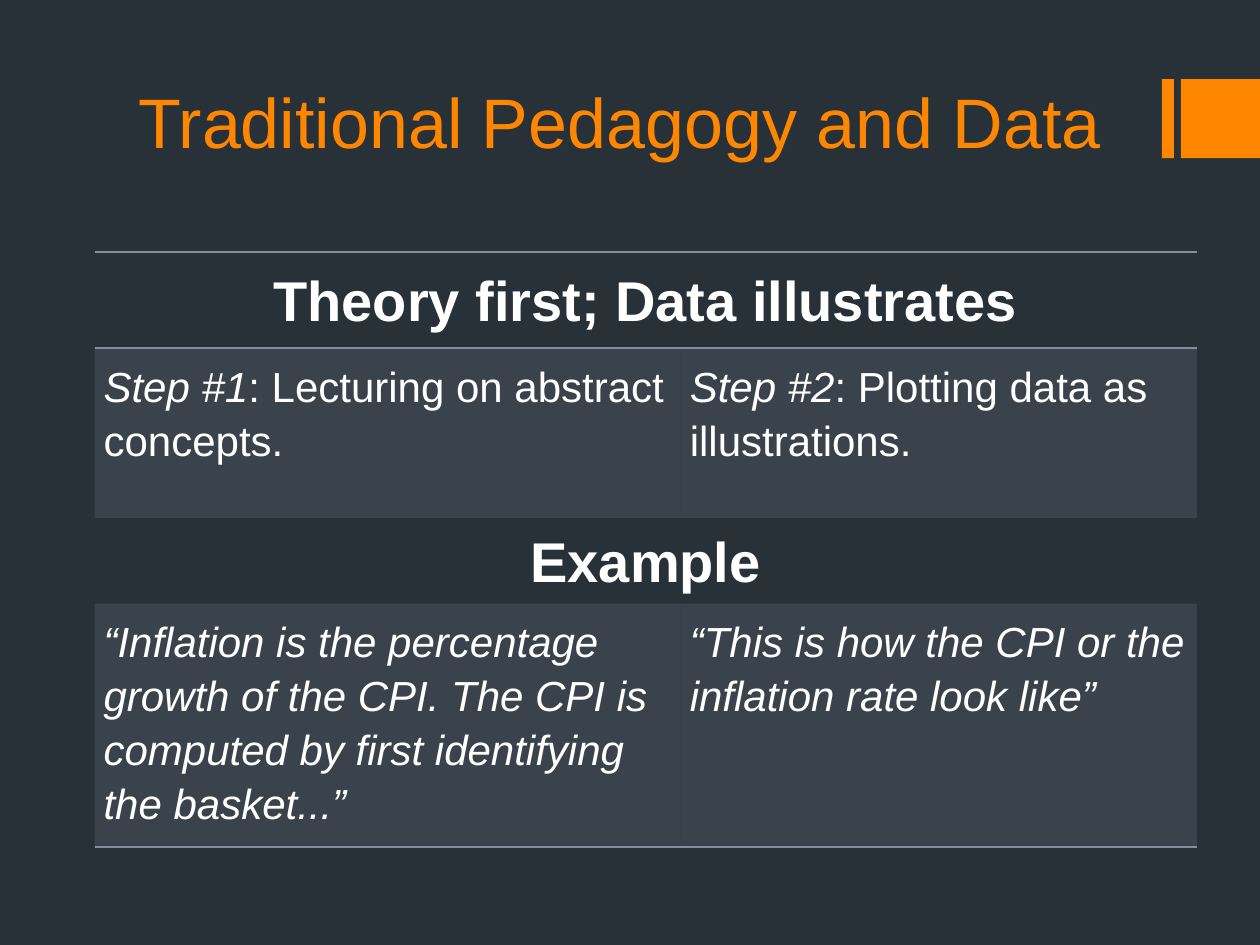
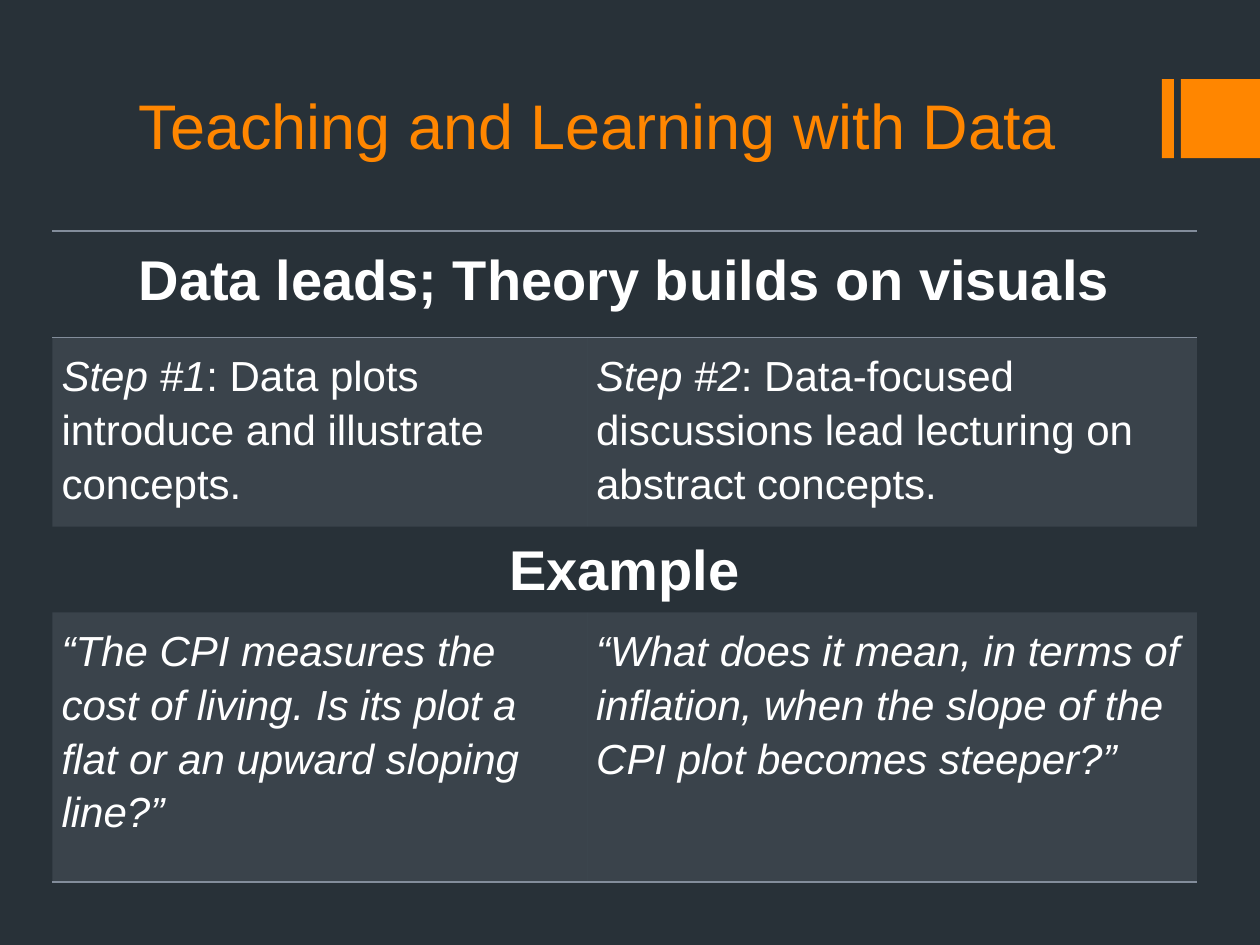
from dataclasses import dataclass

import pptx
import pptx.dml.color
import pptx.enum.shapes
import pptx.enum.text
import pptx.oxml
import pptx.oxml.ns
import pptx.util

Pt = pptx.util.Pt
PP_ALIGN = pptx.enum.text.PP_ALIGN


@dataclass(frozen=True)
class Theme:
    background: str = "283138"
    accent: str = "FF8600"
    text: str = "FFFFFF"
    rule: str = "838D9B"
    panel_opacity: int = 20
    font: str = "Arial"
    heading_size: int = 32
    body_size: int = 24
    line_spacing: float = 1.15
    cell_inset: float = 5.2


THEME = Theme()
SLIDE_SIZE = (720, 540)
TITLE_BOX = (72, 6, 576, 90.5)
ACCENT_BLOCKS = [(664, 45.2, 6.8, 45.2), (674.8, 45.2, 45.2, 45.2)]
NO_GRID_STYLE = "{2D5ABB26-0587-4C30-8999-92F81FD0307C}"

# Each body cell is (italic part, upright part).
LESSONS = [
    {
        "title": "Traditional Pedagogy and Data",
        "title_size": 40,
        "corner": (54, 144),
        "columns": (335, 295),
        "rows": (55, 97, 49, 139),
        "heading": "Theory first; Data illustrates",
        "steps": [
            ("Step #1", ": Lecturing on abstract concepts."),
            ("Step #2", ": Plotting data as illustrations."),
        ],
        "examples": [
            ("“Inflation is the percentage growth of the CPI. The CPI is "
             "computed by first identifying the basket...”", ""),
            ("“This is how the CPI or the inflation rate look like”", ""),
        ],
    },
    {
        "title": "Teaching and Learning with Data",
        "title_size": 36,
        "corner": (30, 132),
        "columns": (305.5, 348.5),
        "rows": (61, 108, 49, 154),
        "heading": "Data leads; Theory builds on visuals",
        "steps": [
            ("Step #1", ": Data plots introduce and illustrate concepts."),
            ("Step #2", ": Data-focused discussions lead lecturing on "
                        "abstract concepts."),
        ],
        "examples": [
            ("“The CPI measures the cost of living. Is its plot a flat or an "
             "upward sloping line?”", ""),
            ("“What does it mean, in terms of inflation, when the slope of "
             "the CPI plot becomes steeper?”", ""),
        ],
    },
]


def rgb(color):
    return pptx.dml.color.RGBColor.from_string(color)


def style(paragraph, size, color, alignment=PP_ALIGN.LEFT, spacing=1.0, bold=False):
    paragraph.alignment = alignment
    paragraph.line_spacing = spacing
    paragraph.font.name = THEME.font
    paragraph.font.size = Pt(size)
    paragraph.font.bold = bold
    paragraph.font.color.rgb = rgb(color)


def add_title(slide, lesson):
    title = slide.shapes.title
    title.left, title.top, title.width, title.height = map(Pt, TITLE_BOX)
    frame = title.text_frame
    frame.text = lesson["title"]
    frame.vertical_anchor = pptx.enum.text.MSO_ANCHOR.BOTTOM
    frame.auto_size = pptx.enum.text.MSO_AUTO_SIZE.NONE
    style(frame.paragraphs[0], lesson["title_size"], THEME.accent)


def add_accent_blocks(slide):
    for box in ACCENT_BLOCKS:
        block = slide.shapes.add_shape(
            pptx.enum.shapes.MSO_SHAPE.RECTANGLE, *map(Pt, box))
        block.shadow.inherit = False
        block.fill.solid()
        block.fill.fore_color.rgb = rgb(THEME.accent)
        block.line.fill.background()


def set_borders(cell, sides):
    """Rule the given sides ("T", "B"), listed in schema order before the fill."""
    properties = cell._tc.get_or_add_tcPr()
    for position, side in enumerate(sides):
        properties.insert(position, pptx.oxml.parse_xml(
            f'<a:ln{side} {pptx.oxml.ns.nsdecls("a")} w="{Pt(1)}"><a:solidFill>'
            f'<a:srgbClr val="{THEME.rule}"/></a:solidFill></a:ln{side}>'))


def set_insets(cell):
    cell.margin_left = cell.margin_right = Pt(THEME.cell_inset)
    cell.margin_top = cell.margin_bottom = Pt(THEME.cell_inset)


def fill_heading_row(table, row, text, spacing, borders=""):
    for column in range(2):
        cell = table.cell(row, column)
        set_insets(cell)
        cell.fill.background()
        set_borders(cell, borders)
    heading = table.cell(row, 0)
    heading.merge(table.cell(row, 1))
    heading.text = text
    style(heading.text_frame.paragraphs[0], THEME.heading_size, THEME.text,
          PP_ALIGN.CENTER, spacing, bold=True)


def fill_body_row(table, row, entries, borders=""):
    for column, (italic, upright) in enumerate(entries):
        cell = table.cell(row, column)
        set_insets(cell)
        cell.fill.solid()
        cell.fill.fore_color.rgb = rgb(THEME.rule)
        color = cell._tc.tcPr.find(".//" + pptx.oxml.ns.qn("a:srgbClr"))
        color.append(pptx.oxml.parse_xml(
            f'<a:alpha {pptx.oxml.ns.nsdecls("a")} val="{THEME.panel_opacity * 1000}"/>'))
        set_borders(cell, borders)
        paragraph = cell.text_frame.paragraphs[0]
        style(paragraph, THEME.body_size, THEME.text, spacing=THEME.line_spacing)
        for text, is_italic in ((italic, True), (upright, False)):
            if text:
                run = paragraph.add_run()
                run.text = text
                run.font.italic = is_italic


def add_lesson_table(slide, lesson):
    columns, rows = lesson["columns"], lesson["rows"]
    box = (*lesson["corner"], sum(columns), sum(rows))
    table = slide.shapes.add_table(len(rows), len(columns), *map(Pt, box)).table
    table.first_row = table.horz_banding = False
    table._tbl.tblPr.find(pptx.oxml.ns.qn("a:tableStyleId")).text = NO_GRID_STYLE
    for column, width in zip(table.columns, columns):
        column.width = Pt(width)
    for row, height in zip(table.rows, rows):
        row.height = Pt(height)

    fill_heading_row(table, 0, lesson["heading"], THEME.line_spacing, borders="TB")
    fill_body_row(table, 1, lesson["steps"])
    fill_heading_row(table, 2, "Example", 1.07)
    fill_body_row(table, 3, lesson["examples"], borders="B")


def main():
    deck = pptx.Presentation()
    deck.slide_width, deck.slide_height = map(Pt, SLIDE_SIZE)
    backdrop = deck.slide_master.background.fill
    backdrop.solid()
    backdrop.fore_color.rgb = rgb(THEME.background)
    title_only = deck.slide_layouts.get_by_name("Title Only")
    for lesson in LESSONS:
        slide = deck.slides.add_slide(title_only)
        add_accent_blocks(slide)
        add_title(slide, lesson)
        add_lesson_table(slide, lesson)
    deck.save("out.pptx")


if __name__ == "__main__":
    main()
